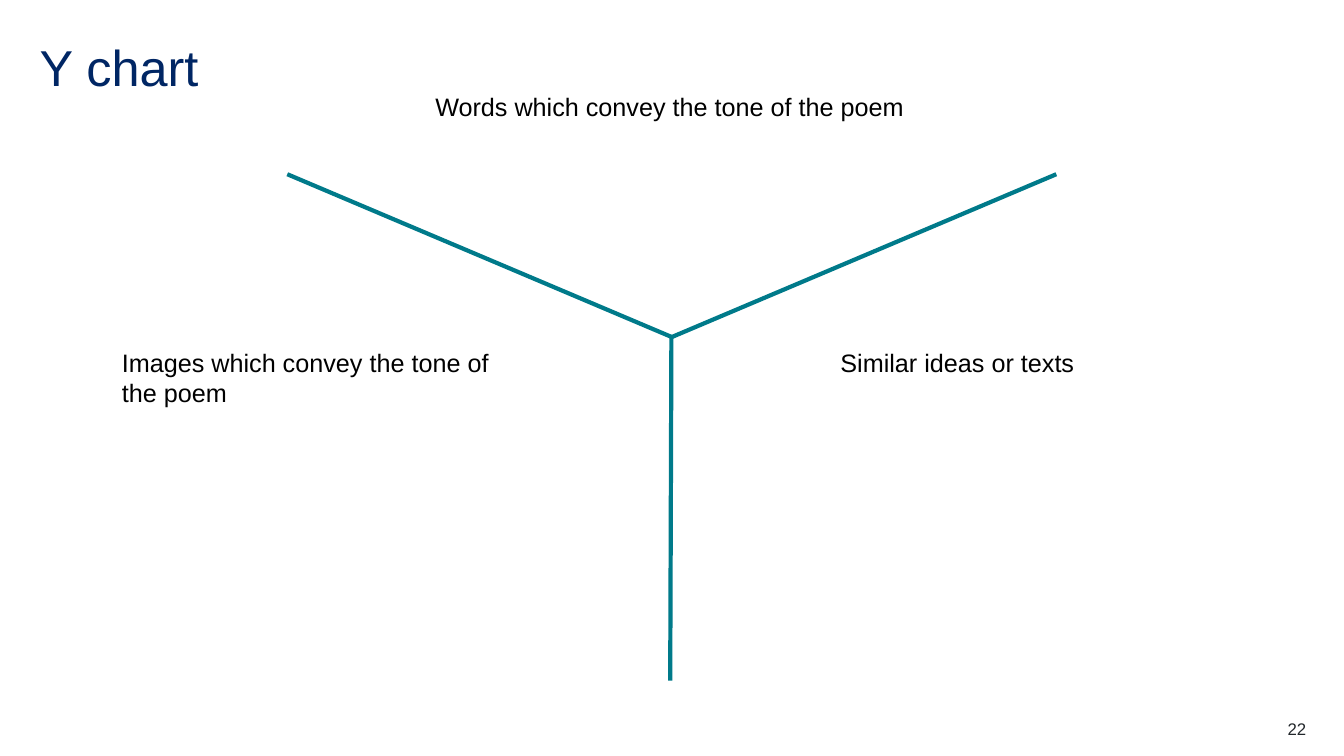
from dataclasses import dataclass

from lxml.etree import SubElement
from pptx import Presentation
from pptx.dml.color import RGBColor
from pptx.enum.shapes import MSO_CONNECTOR
from pptx.enum.text import MSO_ANCHOR, PP_ALIGN
from pptx.oxml.ns import qn
from pptx.slide import Slide
from pptx.util import Cm, Pt


@dataclass(frozen=True)
class Theme:
    font: str = "Arial"
    navy: str = "002664"
    teal: str = "007A8A"
    black: str = "000000"
    gray: str = "22272B"
    title: int = 36
    body: int = 18
    small: int = 12
    stroke: int = 3


THEME = Theme()


@dataclass(frozen=True)
class Label:
    """Text with its box in centimetres."""
    text: str
    left: float
    top: float
    width: float
    height: float
    size: int = THEME.body
    color: str = THEME.black
    inset: float = 0.33
    align: PP_ALIGN = PP_ALIGN.LEFT
    anchor: MSO_ANCHOR = MSO_ANCHOR.TOP
    spacing: float = 1.0


@dataclass(frozen=True)
class Arm:
    """One stroke of the Y, with its ends in centimetres."""
    start: tuple[float, float]
    end: tuple[float, float]


SIDE_TOP, SIDE_WIDTH, SIDE_HEIGHT = 8.41, 10.44, 9.83
ARM_TOP, FORK = 4.39, 8.51

LABELS = [
    Label("Y chart", 1, 1, 31.9, 1.52, THEME.title, THEME.navy, 0,
          anchor=MSO_ANCHOR.MIDDLE, spacing=0.9),
    Label("Words which convey the tone of the poem", 10.64, 1.96, 12.55, 4.55),
    Label("Images which convey the tone of the poem",
          2.74, SIDE_TOP, SIDE_WIDTH, SIDE_HEIGHT),
    Label("Similar ideas or texts",
          20.85, SIDE_TOP, SIDE_WIDTH, SIDE_HEIGHT),
    Label("22", 30.91, 18.11, 2.01, 0.51, THEME.small, THEME.gray, 0,
          PP_ALIGN.RIGHT, MSO_ANCHOR.BOTTOM),
]

ARMS = [
    Arm((16.92, 8.46), (16.89, 17.15)),
    Arm((26.62, ARM_TOP), (16.89, FORK)),
    Arm((7.24, ARM_TOP), (16.97, FORK)),
]


def add_arm(slide: Slide, arm: Arm) -> None:
    ends = [Cm(value) for value in (*arm.start, *arm.end)]
    line = slide.shapes.add_connector(MSO_CONNECTOR.STRAIGHT, *ends)
    line.line.color.rgb = RGBColor.from_string(THEME.teal)
    line.line.width = Pt(THEME.stroke)
    SubElement(line._element.spPr, qn("a:effectLst"))


def add_label(slide: Slide, label: Label) -> None:
    box = slide.shapes.add_textbox(Cm(label.left), Cm(label.top),
                                   Cm(label.width), Cm(label.height))
    frame = box.text_frame
    frame.word_wrap = True
    frame.vertical_anchor = label.anchor
    frame.margin_left = frame.margin_right = Cm(label.inset)
    frame.margin_top = frame.margin_bottom = Cm(label.inset)
    para = frame.paragraphs[0]
    para.alignment = label.align
    para.line_spacing = label.spacing
    run = para.add_run()
    run.text = label.text
    run.font.name = THEME.font
    run.font.size = Pt(label.size)
    run.font.color.rgb = RGBColor.from_string(label.color)


def main() -> None:
    deck = Presentation()
    deck.slide_width, deck.slide_height = Cm(33.87), Cm(19.05)
    slide = deck.slides.add_slide(deck.slide_layouts[6])
    for arm in ARMS:
        add_arm(slide, arm)
    for label in LABELS:
        add_label(slide, label)
    deck.save("out.pptx")


if __name__ == "__main__":
    main()
